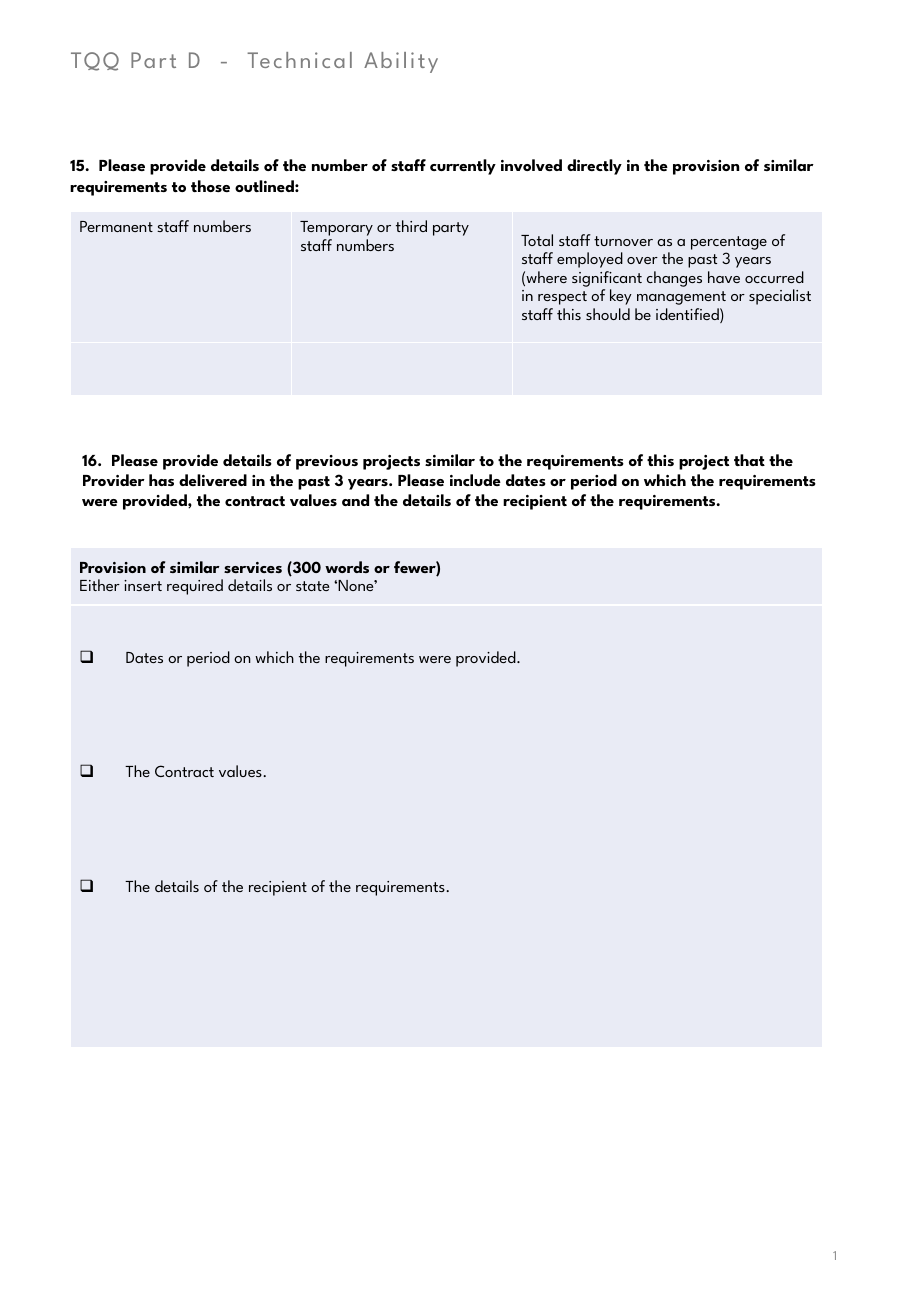
from dataclasses import dataclass

from lxml import etree
from pptx import Presentation
from pptx.dml.color import RGBColor
from pptx.enum.text import MSO_ANCHOR, MSO_AUTO_SIZE, PP_ALIGN
from pptx.oxml.ns import qn
from pptx.util import Pt

TOP, MIDDLE = MSO_ANCHOR.TOP, MSO_ANCHOR.MIDDLE
LEFT, RIGHT = PP_ALIGN.LEFT, PP_ALIGN.RIGHT
NO_AUTOFIT = MSO_AUTO_SIZE.NONE
FONT = "League Spartan"
BLACK, WHITE, GREY, PALE_GREY = "000000", "FFFFFF", "808080", "8C8C8C"
CELL_FILL = "E9EBF5"
TABLE_LEFT = 41.8


@dataclass
class Box:
    left: float
    top: float
    width: float
    height: float


@dataclass
class Line:
    text: str
    bold: bool = False
    bullet: bool = False
    space_after: float = 0


@dataclass
class CellText:
    lines: list[Line]
    anchor: MSO_ANCHOR = TOP
    margin_top: float = 3.6


@dataclass
class TableSpec:
    top: float
    columns: list[float]
    rows: list[float]
    cells: list[list[CellText]]


def colour(value: str) -> RGBColor:
    return RGBColor.from_string(value)


def write(paragraph, text: str, *, size: float = 10, ink: str = BLACK,
          bold: bool = False, align: PP_ALIGN = LEFT, line_spacing=1.0,
          space_after: float = 0, tracking: int = 0) -> None:
    paragraph.alignment = align
    paragraph.line_spacing = line_spacing
    paragraph.space_before = Pt(0)
    paragraph.space_after = Pt(space_after)
    run = paragraph.add_run()
    run.text = text
    run.font.name = FONT
    run.font.size = Pt(size)
    run.font.bold = bold
    run.font.color.rgb = colour(ink)
    if tracking:
        run._r.get_or_add_rPr().set("spc", str(tracking))


def add_bullet(paragraph) -> None:
    properties = paragraph._p.get_or_add_pPr()
    properties.set("marL", str(Pt(27.4)))
    properties.set("indent", str(-Pt(27.4)))
    etree.SubElement(properties, qn("a:buChar")).set("char", "❑")


def place(shape, box: Box, anchor: MSO_ANCHOR = TOP):
    shape.left, shape.top = Pt(box.left), Pt(box.top)
    shape.width, shape.height = Pt(box.width), Pt(box.height)
    frame = shape.text_frame
    frame.word_wrap = True
    frame.auto_size = NO_AUTOFIT
    frame.vertical_anchor = anchor
    return frame.paragraphs[0]


def add_text(slide, box: Box, text: str, anchor: MSO_ANCHOR = TOP, **style) -> None:
    shape = slide.shapes.add_textbox(0, 0, 0, 0)
    write(place(shape, box, anchor), text, **style)


def set_borders(cell) -> None:
    properties = cell._tc.get_or_add_tcPr()
    for index, side in enumerate(("lnL", "lnR", "lnT", "lnB")):
        border = etree.Element(qn(f"a:{side}"), w=str(Pt(1)))
        fill = etree.SubElement(border, qn("a:solidFill"))
        etree.SubElement(fill, qn("a:srgbClr")).set("val", WHITE)
        properties.insert(index, border)


def fill_cell(cell, content: CellText) -> None:
    cell.fill.solid()
    cell.fill.fore_color.rgb = colour(CELL_FILL)
    set_borders(cell)
    cell.vertical_anchor = content.anchor
    cell.margin_left = cell.margin_right = Pt(5.2)
    cell.margin_top, cell.margin_bottom = Pt(content.margin_top), Pt(3)
    for index, line in enumerate(content.lines):
        frame = cell.text_frame
        paragraph = frame.add_paragraph() if index else frame.paragraphs[0]
        write(paragraph, line.text, bold=line.bold, line_spacing=1.2,
              space_after=line.space_after)
        if line.bullet:
            add_bullet(paragraph)


def add_table(slide, spec: TableSpec) -> None:
    table = slide.shapes.add_table(
        len(spec.rows), len(spec.columns), Pt(TABLE_LEFT), Pt(spec.top),
        Pt(sum(spec.columns)), Pt(sum(spec.rows))).table
    table.first_row = table.horz_banding = False
    for column, width in zip(table.columns, spec.columns):
        column.width = Pt(width)
    for row, height, contents in zip(table.rows, spec.rows, spec.cells):
        row.height = Pt(height)
        for cell, content in zip(row.cells, contents):
            fill_cell(cell, content)


STAFF_TABLE = TableSpec(125.5, [131, 131, 183.6], [77.6, 31.6], [
    [CellText([Line("Permanent staff numbers")]),
     CellText([Line("Temporary or third party staff numbers")]),
     CellText([Line("Total staff turnover as a percentage of staff employed over "
                    "the past 3 years (where significant changes have occurred in "
                    "respect of key management or specialist staff this should be "
                    "identified)")], MIDDLE)],
    [CellText([]) for _ in range(3)],
])

PROJECT_DETAILS = [
    "Dates or period on which the requirements were provided.",
    "The Contract values.",
    "The details of the recipient of the requirements.",
]

PROJECT_TABLE = TableSpec(324.5, [445.6], [34.2, 262.4], [
    [CellText([Line("Provision of similar services (300 words or fewer)", bold=True),
               Line("Either insert required details or state ‘None’")], MIDDLE)],
    [CellText([Line(detail, bullet=True, space_after=56.8)
               for detail in PROJECT_DETAILS], margin_top=25.8)],
])


def main() -> None:
    presentation = Presentation()
    presentation.slide_width, presentation.slide_height = Pt(540), Pt(780)
    slide = presentation.slides.add_slide(presentation.slide_layouts[5])

    # Heading
    heading = place(slide.shapes.title, Box(34.6, 22.5, 355, 24.5), MIDDLE)
    write(heading, "TQQ Part D  -  Technical Ability", size=14, ink=GREY, tracking=140)

    # Question 15
    add_text(slide, Box(34.6, 87.8, 466, 34),
             "15.  Please provide details of the number of staff currently involved "
             "directly in the provision of similar requirements to those outlined:",
             bold=True, line_spacing=Pt(12.4))
    add_table(slide, STAFF_TABLE)

    # Question 16
    add_text(slide, Box(41.8, 262.8, 456, 55),
             "16.  Please provide details of previous projects similar to the "
             "requirements of this project that the Provider has delivered in the past "
             "3 years. Please include dates or period on which the requirements were "
             "provided, the contract values and the details of the recipient of the "
             "requirements.", bold=True, line_spacing=Pt(12))
    add_table(slide, PROJECT_TABLE)

    # Page number
    add_text(slide, Box(381.6, 723, 121.7, 41.8), "1", MIDDLE,
             size=8, ink=PALE_GREY, align=RIGHT)

    presentation.save("out.pptx")


if __name__ == "__main__":
    main()
